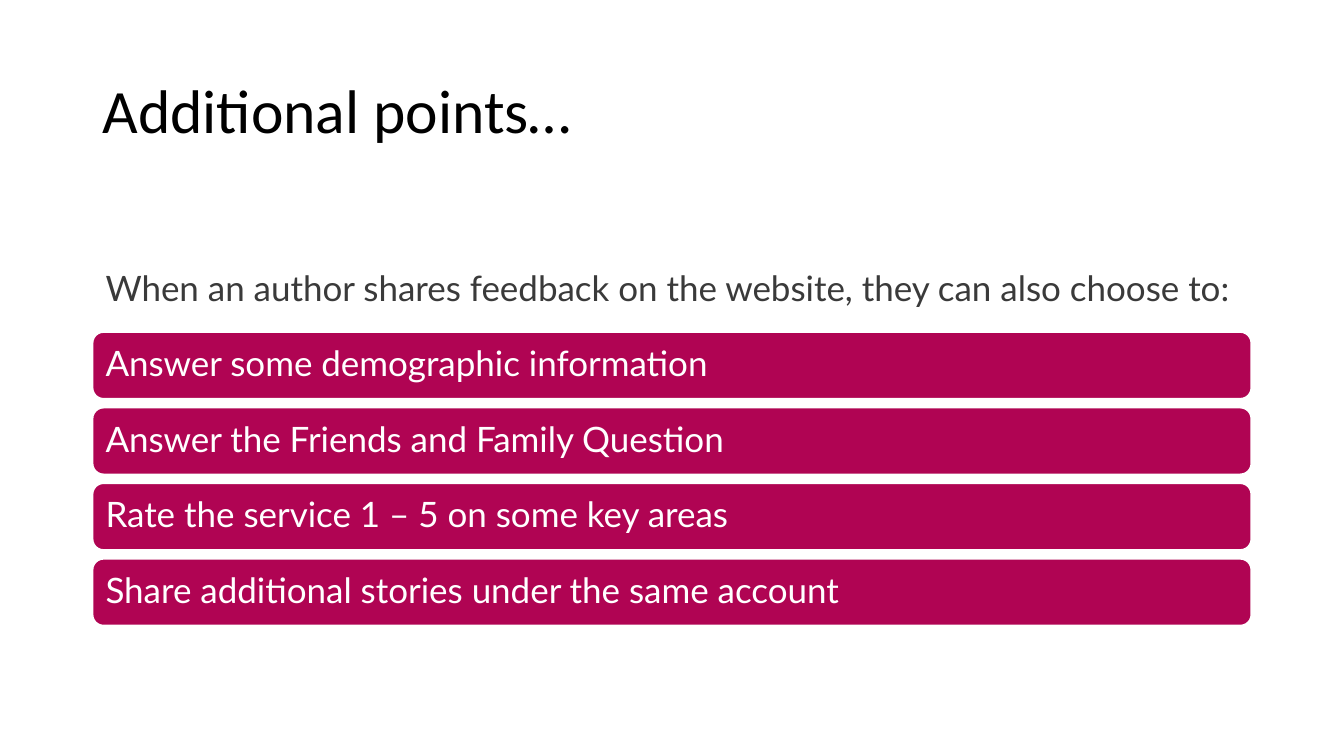
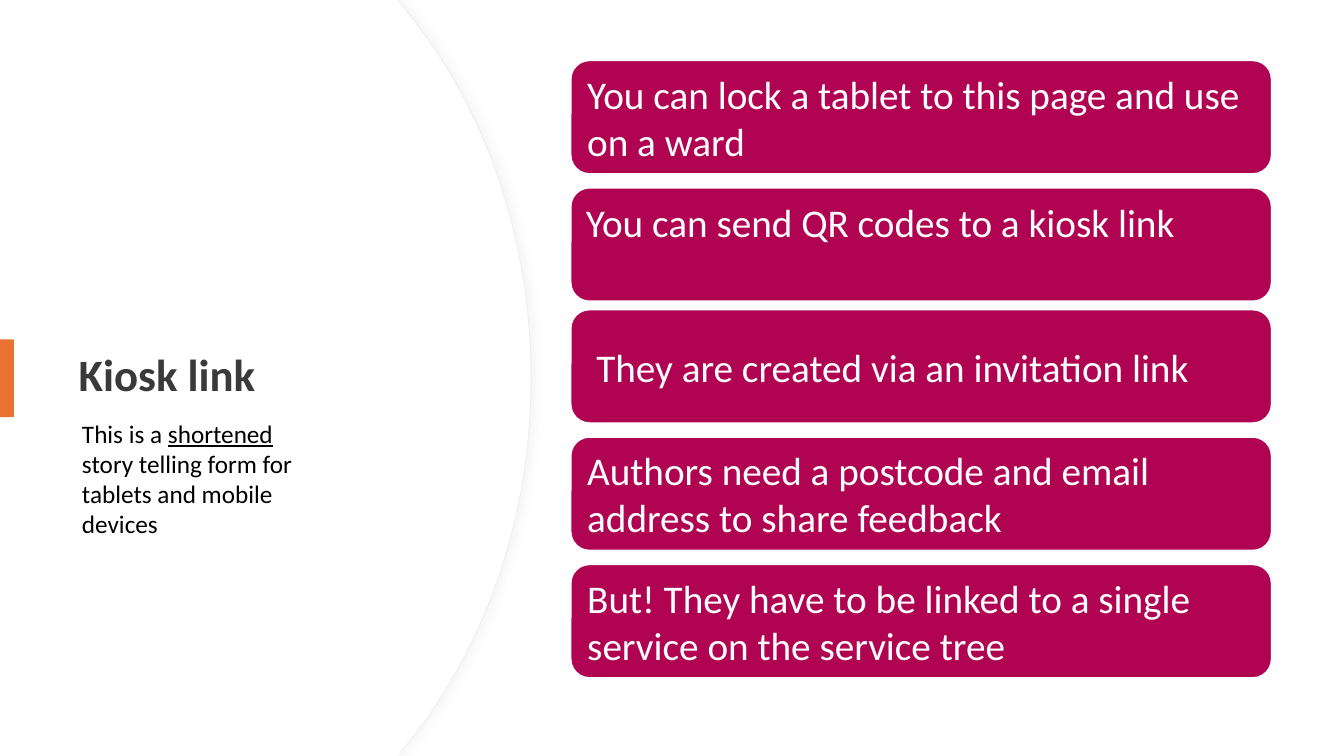
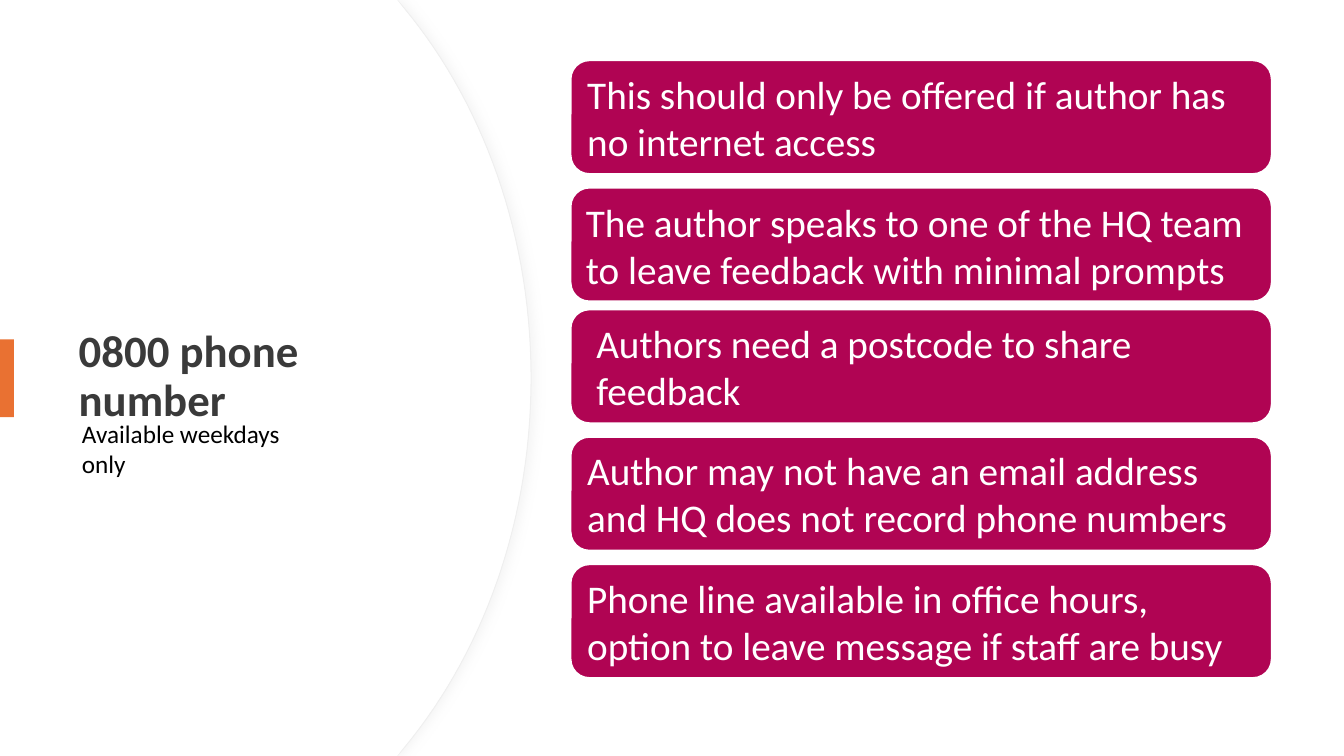
from lxml import etree
from pptx import Presentation
from pptx.dml.color import RGBColor
from pptx.enum.shapes import MSO_SHAPE
from pptx.enum.text import MSO_ANCHOR, MSO_AUTO_SIZE, PP_ALIGN
from pptx.oxml.ns import qn
from pptx.util import Pt

RECT, ROUND = MSO_SHAPE.RECTANGLE, MSO_SHAPE.ROUNDED_RECTANGLE
TOP, MID = MSO_ANCHOR.TOP, MSO_ANCHOR.MIDDLE
LEFT, FIXED = PP_ALIGN.LEFT, MSO_AUTO_SIZE.NONE
WHITE, BLACK, GREY = "FFFFFF", "000000", "3A3A3A"
BERRY, ORANGE, PALE, SHADE = "B00453", "E97132", "EFEFEF", "D9D9D9"
WIDE, HIGH = 960, 540

# Content
POINTS = {
    "title": "Additional points…",
    "intro": "When an author shares feedback on the website, they can also choose to:",
    "bars": [
        "Answer some demographic information",
        "Answer the Friends and Family Question",
        "Rate the service 1 – 5 on some key areas",
        "Share additional stories under the same account",
    ],
}
TOPICS = [
    {
        "title": "Kiosk link",
        "blurb": [("This is a ", False), ("shortened", True),
                  (" story telling form for tablets and mobile devices", False)],
        "high": 94,
        "bars": [
            "You can lock a tablet to this page and use on a ward",
            "You can send QR codes to a kiosk link",
            "They are created via an invitation link",
            "Authors need a postcode and email address to share feedback",
            "But! They have to be linked to a single service on the service tree",
        ],
    },
    {
        "title": "0800 phone number",
        "blurb": [("Available weekdays only", False)],
        "high": 51,
        "bars": [
            "This should only be offered if author has no internet access",
            "The author speaks to one of the HQ team to leave feedback with minimal prompts",
            "Authors need a postcode to share feedback",
            "Author may not have an email address and HQ does not record phone numbers",
            "Phone line available in office hours, option to leave message if staff are busy",
        ],
    },
]

# Bar places on the topic slides: top, anchor, insets (left, top, right, bottom)
EVEN = (8, 8, 8, 8)
ROWS = [
    (43, MID, EVEN),
    (134, TOP, (7.2, 3.6, 7.2, 3.6)),
    (221, MID, (14.5, 8, 1.5, 8)),
    (312, MID, EVEN),
    (403, MID, EVEN),
]

# Text styles
HEAD = {"name": "Calibri", "size": Pt(44), "bold": False, "color": BLACK}
SIDE = {"name": "Calibri", "size": Pt(32), "bold": True, "color": GREY}
ITEM = {"name": "Lato", "size": Pt(25), "color": WHITE}
LEAD = {**ITEM, "color": GREY}
CARD = {"name": "Calibri", "size": Pt(28), "color": WHITE}
NOTE = {"name": "Calibri", "size": Pt(18), "color": BLACK}


def rgb(code):
    return RGBColor.from_string(code)


def put(shape, box):
    for key, size in zip(("left", "top", "width", "height"), box):
        setattr(shape, key, Pt(size))


def write(shape, runs, style, anchor=MID, pads=(7.2, 3.6, 7.2, 3.6), lines=1.0, after=0):
    frame = shape.text_frame
    frame.word_wrap, frame.auto_size = True, FIXED
    frame.vertical_anchor = anchor
    for side, pad in zip(("left", "top", "right", "bottom"), pads):
        setattr(frame, "margin_" + side, Pt(pad))
    para = frame.paragraphs[0]
    para.alignment, para.line_spacing, para.space_after = LEFT, lines, Pt(after)
    for text, under in runs:
        run = para.add_run()
        run.text = text
        for key, value in style.items():
            if key == "color":
                run.font.color.rgb = rgb(value)
            else:
                setattr(run.font, key, value)
        if under:
            run.font.underline = True


def paint(shape, fill, line=None, width=1.5):
    shape.shadow.inherit = False
    shape.fill.solid()
    shape.fill.fore_color.rgb = rgb(fill)
    if line:
        shape.line.color.rgb = rgb(line)
        shape.line.width = Pt(width)
    else:
        shape.line.fill.background()


def block(slide, kind, box, fill, line=None):
    shape = slide.shapes.add_shape(kind, *map(Pt, box))
    paint(shape, fill, line)
    return shape


def head(slide, text, box, style, after=0):
    title = slide.shapes.title
    put(title, box)
    write(title, [(text, False)], style, lines=0.9, after=after)
    # Keep the title in front of the shapes drawn so far
    title.element.getparent().append(title.element)


def curve(ends, steps=30):
    for i in range(1, steps + 1):
        t = i / steps
        parts = ((1 - t) ** 3, 3 * t * (1 - t) ** 2, 3 * t * t * (1 - t), t ** 3)
        yield tuple(sum(a * p[k] for a, p in zip(parts, ends)) for k in (0, 1))


def panel(slide, right):
    mid, edge = HIGH / 2, right - 90.7
    upper = [(edge, 5.8), (right - 34.6, 73.4), (right, 167), (right, mid)]
    lower = [(x, HIGH - y) for x, y in reversed(upper)]
    dots = [(283.7, 0), upper[0], *curve(upper), *curve(lower), (283.7, HIGH), (0, HIGH)]
    pen = slide.shapes.build_freeform(0, 0)
    pen.add_line_segments([(Pt(x), Pt(y)) for x, y in dots], close=True)
    return pen.convert_to_shape()


def shade(shape):
    effects = shape.element.spPr.find(qn("a:effectLst"))
    cast = etree.SubElement(effects, qn("a:outerShdw"), blurRad=str(Pt(7)), dist=str(Pt(3)), dir="0")
    tint = etree.SubElement(cast, qn("a:srgbClr"), val=SHADE)
    etree.SubElement(tint, qn("a:alpha"), val="25000")


def points(slide, data):
    head(slide, data["title"], (66, 29, 828, 104), HEAD)
    rows = [(data["intro"], WHITE, LEAD)] + [(text, BERRY, ITEM) for text in data["bars"]]
    for i, (text, fill, style) in enumerate(rows):
        bar = block(slide, ROUND, (66, 183 + 54 * i, 828, 48), fill, WHITE)
        write(bar, [(text, False)], style, pads=(7.2,) * 4, lines=0.9)


def topic(slide, data):
    # Curved side panel with title and accent
    rim = panel(slide, 379.4)
    paint(rim, WHITE, PALE, 0.75)
    shade(rim)
    paint(panel(slide, 378.7), WHITE)
    head(slide, data["title"], (49, 91.5, 280, 356), SIDE, after=6)
    block(slide, RECT, (0, 242.5, 10, 55.5), ORANGE)
    # Cards
    for text, (top, anchor, pads) in zip(data["bars"], ROWS):
        card = block(slide, ROUND, (407.5, top, 501, 81.4), BERRY, WHITE)
        write(card, [(text, False)], CARD, anchor, pads)
    # Text under the title
    note = slide.shapes.add_textbox(*map(Pt, (51.5, 295, 185, data["high"])))
    write(note, data["blurb"], NOTE, TOP)


def main():
    deck = Presentation()
    deck.slide_width, deck.slide_height = Pt(WIDE), Pt(HIGH)
    plain = deck.slide_layouts[5]
    points(deck.slides.add_slide(plain), POINTS)
    for data in TOPICS:
        topic(deck.slides.add_slide(plain), data)
    deck.save("out.pptx")


if __name__ == "__main__":
    main()
